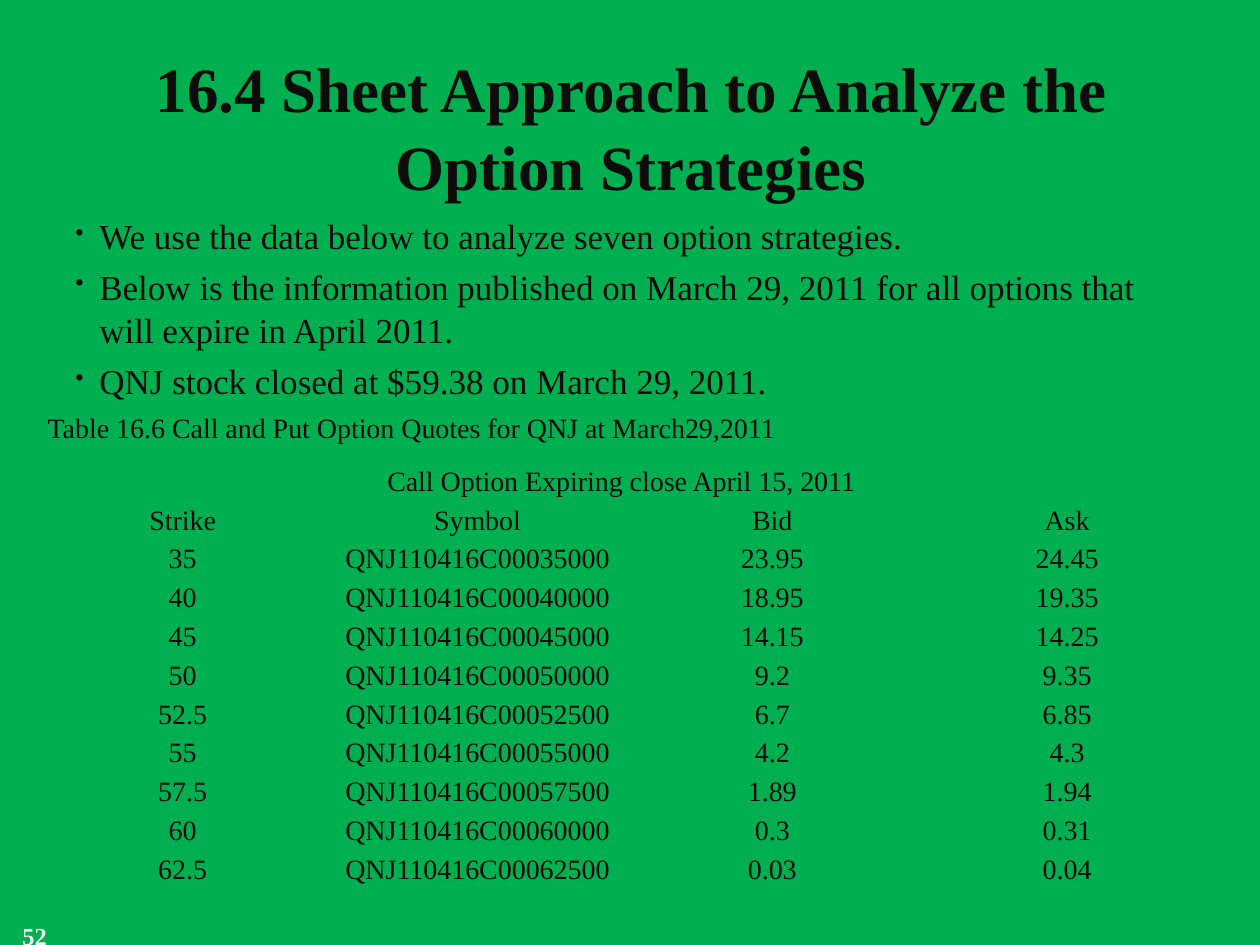
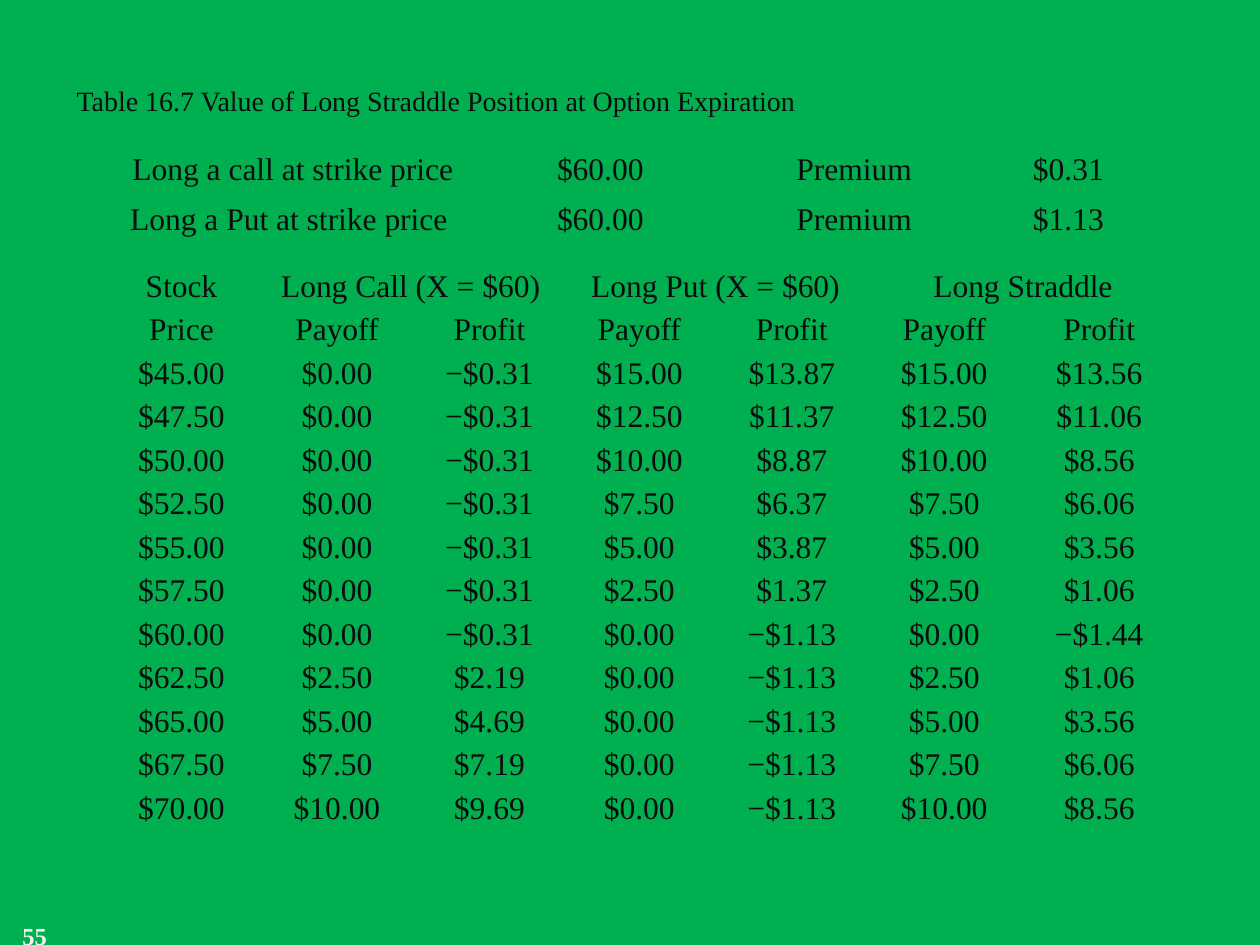
from lxml import etree
from pptx import Presentation
from pptx.dml import color
from pptx.enum import text
from pptx.oxml import ns
from pptx.util import Inches, Pt

FONT = "Times New Roman"
GREEN, INK, PALE = "00B050", "0C0C0C", "F2F2F2"


def rgb(value):
    return color.RGBColor.from_string(value)


def money(value):
    sign = "−" if value < 0 else ""
    return f"{sign}${abs(value):.2f}"


class Deck:
    def __init__(self):
        self.prs = Presentation()
        self.prs.slide_width, self.prs.slide_height = Inches(10), Inches(7.5)
        self.slide = None

    def new_slide(self, number):
        self.slide = self.prs.slides.add_slide(self.prs.slide_layouts[6])
        self.slide.background.fill.solid()
        self.slide.background.fill.fore_color.rgb = rgb(GREEN)
        self.text((0.08, 7.26, 2.33, 0.4), [str(number)], 14, PALE, bold=True)

    def style(self, paragraph, size, ink=INK, bold=False, align=None):
        paragraph.alignment = align
        for run in paragraph.runs:
            run.font.name, run.font.size = FONT, Pt(size)
            run.font.bold = bold
            run.font.color.rgb = rgb(ink)

    def text(self, place, lines, size, ink=INK, bold=False, align=None,
             anchor=text.MSO_ANCHOR.TOP):
        frame = self.slide.shapes.add_textbox(*map(Inches, place)).text_frame
        frame.word_wrap = True
        frame.vertical_anchor = anchor
        frame.text = "\n".join(lines)
        for paragraph in frame.paragraphs:
            self.style(paragraph, size, ink, bold, align)
        return frame.paragraphs

    def title(self, wording):
        heading, = self.text((0.51, 0.64, 9, 0.7), [wording], 36, bold=True,
                             align=text.PP_ALIGN.CENTER, anchor=text.MSO_ANCHOR.MIDDLE)
        heading.line_spacing = 1.04

    def bullets(self, place, lines, size):
        for index, paragraph in enumerate(self.text(place, lines, size)):
            props = paragraph._p.get_or_add_pPr()
            props.set("marL", str(Inches(0.19)))
            props.set("indent", str(-Inches(0.19)))
            etree.SubElement(props, ns.qn("a:buSzPct"), val="70000")
            etree.SubElement(props, ns.qn("a:buChar"), char="•")
            paragraph.line_spacing = 1.04
            if index:
                paragraph.space_before = Pt(size * 0.2)

    def caption(self, left, top, wording):
        self.text((left, top, 8.5, 0.39), [wording], 16, anchor=text.MSO_ANCHOR.MIDDLE)

    def table(self, left, top, height, widths, rows, size, spans=()):
        grid = self.slide.shapes.add_table(
            len(rows), len(widths), Inches(left), Inches(top),
            Inches(sum(widths)), Inches(height)).table
        grid.first_row = grid.horz_banding = False
        for column, width in zip(grid.columns, widths):
            column.width = Inches(width)
        for row, values in zip(grid.rows, rows):
            row.height = Inches(height / len(rows))
            for cell, value in zip(row.cells, values):
                self.cell(cell, value, size)
        for first, last in spans:
            grid.cell(0, first).merge(grid.cell(0, last))

    def cell(self, cell, value, size):
        cell.margin_left = cell.margin_right = Inches(0.07)
        cell.margin_top = cell.margin_bottom = 0
        cell.vertical_anchor = text.MSO_ANCHOR.MIDDLE
        props = cell._tc.get_or_add_tcPr()
        for side in ("lnL", "lnR", "lnT", "lnB"):
            border = etree.SubElement(props, ns.qn(f"a:{side}"))
            etree.SubElement(border, ns.qn("a:noFill"))
        cell.fill.background()
        cell.text_frame.text = value
        self.style(cell.text_frame.paragraphs[0], size, align=text.PP_ALIGN.CENTER)


def quotes_slide(deck):
    deck.new_slide(52)
    deck.title("16.4 Sheet Approach to Analyze the Option Strategies")
    deck.bullets((0.5, 1.64, 9, 1.6), [
        "We use the data below to analyze seven option strategies.",
        "Below is the information published on March 29, 2011 for all options "
        "that will expire in April 2011.",
        "QNJ stock closed at $59.38 on March 29, 2011.",
    ], 20)
    deck.caption(0.28, 3.2, "Table 16.6 Call and Put Option Quotes for QNJ at March29,2011")
    quotes = [
        (35, "23.95", "24.45"), (40, "18.95", "19.35"), (45, "14.15", "14.25"),
        (50, "9.2", "9.35"), (52.5, "6.7", "6.85"), (55, "4.2", "4.3"),
        (57.5, "1.89", "1.94"), (60, "0.3", "0.31"), (62.5, "0.03", "0.04"),
    ]
    rows = [["Call Option Expiring close April 15, 2011 ", "", "", ""],
            ["Strike", "Symbol", "Bid", "Ask"]]
    rows += [[str(strike), f"QNJ110416C{int(strike * 1000):08d}", bid, ask]
             for strike, bid, ask in quotes]
    deck.table(0.28, 3.67, 3.39, [2.34] * 4, rows, 16, spans=[(0, 3)])


def straddle_slide(deck):
    strike, call_premium, put_premium = 60, 0.31, 1.13
    deck.new_slide(55)
    deck.caption(0.51, 0.6, "Table 16.7 Value of Long Straddle Position at Option Expiration")
    positions = [
        ["Long a call at strike price", money(strike), "", "Premium", money(call_premium)],
        ["Long a Put at strike price ", money(strike), "", "Premium", money(put_premium)],
    ]
    deck.table(0.83, 1.15, 0.79, [2.99, 1.89, 0.22, 1.7, 1.7], positions, 18)

    rows = [["Stock", "Long Call (X = $60)", "", "Long Put (X = $60)", "", "Long Straddle", ""],
            ["Price"] + ["Payoff", "Profit"] * 3]
    for step in range(11):
        price = 45 + 2.5 * step
        call, put = max(price - strike, 0), max(strike - price, 0)
        both = call + put
        values = [price, call, call - call_premium, put, put - put_premium,
                  both, both - call_premium - put_premium]
        rows.append([money(value) for value in values])
    deck.table(0.83, 2.1, 4.49, [1.22, 1.25, 1.17, 1.21, 1.21, 1.21, 1.25], rows, 18,
               spans=[(1, 2), (3, 4), (5, 6)])


def main():
    deck = Deck()
    quotes_slide(deck)
    straddle_slide(deck)
    deck.prs.save("out.pptx")


if __name__ == "__main__":
    main()
